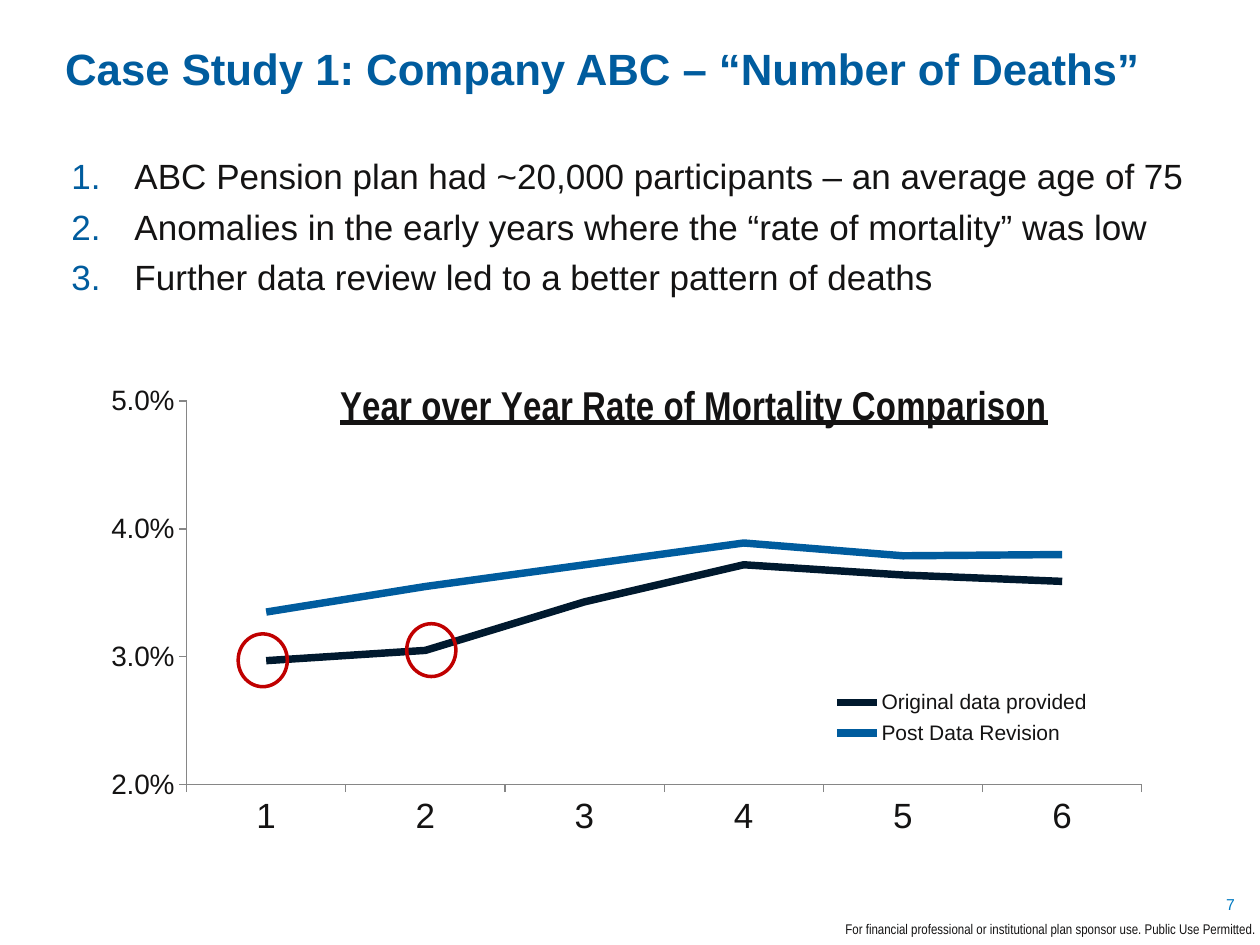
from lxml import etree
from pptx import Presentation
from pptx.chart import data
from pptx.dml.color import RGBColor
from pptx.enum import chart as charts, shapes, text
from pptx.oxml import ns
from pptx.util import Pt

COLORS = {"ink": "141313", "blue": "005C9E", "navy": "00192E",
          "number": "007AC2", "alert": "C00000", "axis": "868686"}
RATES = {"Original data provided": ("navy", (0.0297, 0.0305, 0.0343, 0.0372, 0.0364, 0.0359)),
         "Post Data Revision": ("blue", (0.0335, 0.0355, 0.0372, 0.0389, 0.0379, 0.038))}
FINDINGS = ("ABC Pension plan had ~20,000 participants – an average age of 75",
            "Anomalies in the early years where the “rate of mortality” was low",
            "Further data review led to a better pattern of deaths")


def color(name):
    """Return a named colour."""
    return RGBColor.from_string(COLORS[name])


def style(font, size, name="ink", face="Arial", bold=False):
    """Set the size, colour, face and weight of a font."""
    font.size, font.name, font.bold = Pt(size), face, bold
    font.color.rgb = color(name)


def add_text(slide, box, content, size, name="ink", face="Arial", bold=False, align=text.PP_ALIGN.LEFT):
    """Add a wrapped text box and return its frame."""
    frame = slide.shapes.add_textbox(*map(Pt, box)).text_frame
    frame.word_wrap = True
    frame.text = content
    for paragraph in frame.paragraphs:
        paragraph.alignment = align
        for run in paragraph.runs:
            style(run.font, size, name, face, bold)
    return frame


def add_findings(slide, box):
    """Add the numbered list of findings."""
    frame = add_text(slide, box, "\n".join(FINDINGS), 20)
    for index, paragraph in enumerate(frame.paragraphs):
        paragraph.space_before = Pt(4.6 if index else 0)
        properties = paragraph._p.get_or_add_pPr()
        properties.set("marL", str(Pt(36)))
        properties.set("indent", str(Pt(-36)))
        bullet_color = etree.SubElement(properties, ns.qn("a:buClr"))
        etree.SubElement(bullet_color, ns.qn("a:srgbClr"), val=COLORS["blue"])
        etree.SubElement(properties, ns.qn("a:buFont"), typeface="+mj-lt")
        etree.SubElement(properties, ns.qn("a:buAutoNum"), type="arabicPeriod")


def place(chart, part, index, **settings):
    """Give a chart part a manual layout."""
    element = chart.element.find(".//" + ns.qn(part))
    for old in element.findall(ns.qn("c:layout")):
        element.remove(old)
    layout = etree.Element(ns.qn("c:layout"))
    manual = etree.SubElement(layout, ns.qn("c:manualLayout"))
    for tag, value in settings.items():
        etree.SubElement(manual, ns.qn("c:" + tag), val=str(value))
    element.insert(index, layout)


def add_chart(slide, box):
    """Add the line chart of mortality rates."""
    chart_data = data.CategoryChartData(number_format="0.0%")
    chart_data.categories = [str(year) for year in range(1, 7)]
    for name, (_, values) in RATES.items():
        chart_data.add_series(name, values)
    chart = slide.shapes.add_chart(charts.XL_CHART_TYPE.LINE, *map(Pt, box), chart_data).chart
    style(chart.font, 10)
    for series, (name, _) in zip(chart.plots[0].series, RATES.values()):
        series.smooth = False
        series.marker.style = charts.XL_MARKER_STYLE.NONE
        series.format.line.color.rgb = color(name)
        series.format.line.width = Pt(4.25)

    for axis, size in ((chart.category_axis, 20), (chart.value_axis, 16)):
        axis.has_major_gridlines = False
        axis.major_tick_mark = charts.XL_TICK_MARK.OUTSIDE
        axis.format.line.color.rgb = color("axis")
        style(axis.tick_labels.font, size)
    axis = chart.value_axis
    axis.minimum_scale, axis.maximum_scale, axis.major_unit = 0.02, 0.05, 0.01
    axis.tick_labels.number_format = "0.0%"
    axis.tick_labels.number_format_is_linked = False

    chart.has_title = True
    title = chart.chart_title
    title.text_frame.text = "Year over Year Rate of Mortality Comparison"
    font = title.text_frame.paragraphs[0].runs[0].font
    style(font, 23, face="Arial Narrow", bold=True)
    font.underline = True
    title.element.find(ns.qn("c:overlay")).set("val", "1")
    place(chart, "c:title", 1, xMode="edge", yMode="edge", x=0.24, y=0)

    chart.has_legend = True
    legend = chart.legend
    legend.position = charts.XL_LEGEND_POSITION.RIGHT
    legend.include_in_layout = True
    style(legend.font, 12)
    place(chart, "c:legend", 1, xMode="edge", yMode="edge", x=0.67, y=0.66, w=0.26, h=0.15)
    place(chart, "c:plotArea", 0, layoutTarget="inner", xMode="edge", yMode="edge",
          x=0.11, y=0.05, w=0.85, h=0.83)


def add_highlight(slide, box):
    """Ring one low data point."""
    ring = slide.shapes.add_shape(shapes.MSO_SHAPE.OVAL, *map(Pt, box))
    ring.shadow.inherit = False
    ring.fill.background()
    ring.line.color.rgb = color("alert")
    ring.line.width = Pt(2)


def add_footer(slide, box):
    """Add the slide number and the usage notice."""
    left, top, width, height = box
    right = text.PP_ALIGN.RIGHT
    number = add_text(slide, (left + width - 48.2, top, 41, 18), "7", 9, "number", align=right)
    number.vertical_anchor = text.MSO_ANCHOR.MIDDLE
    notice = add_text(slide, (left, top + 15.1, width, height - 15.1),
                      "For financial professional or institutional plan sponsor use. Public Use Permitted.",
                      8, face="Arial Narrow", align=right)
    notice.margin_right = Pt(2)


def main():
    """Build and save the case study slide."""
    presentation = Presentation()
    presentation.slide_width, presentation.slide_height = Pt(720), Pt(540)
    slide = presentation.slides.add_slide(presentation.slide_layouts[6])
    add_footer(slide, (334, 507.6, 386, 32.4))
    add_chart(slide, (36, 216, 642.2, 264.2))
    add_text(slide, (30.2, 20.2, 648, 69.8), "Case Study 1: Company ABC – “Number of Deaths”",
             25, "blue", bold=True)
    add_findings(slide, (33.8, 85, 686.2, 353))
    for left, top in ((136.1, 362.2), (232.4, 356.4)):
        add_highlight(slide, (left, top, 28.1, 30.2))
    presentation.save("out.pptx")


if __name__ == "__main__":
    main()
